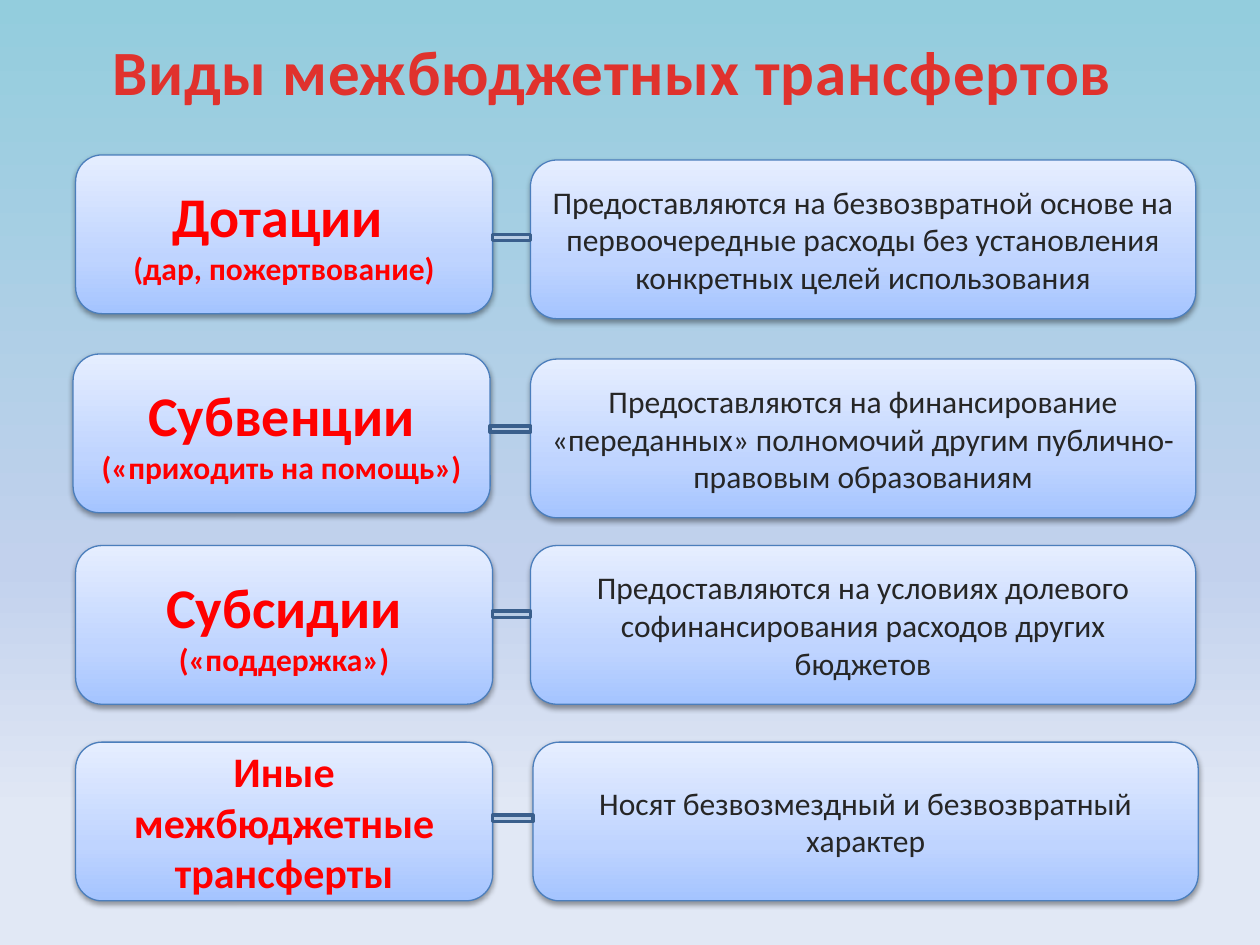
import pptx
import pptx.util
import pptx.oxml
import pptx.oxml.ns
import pptx.dml.color
import pptx.enum.shapes
import pptx.enum.text

Inches = pptx.util.Inches
Pt = pptx.util.Pt
qn = pptx.oxml.ns.qn
rgb = pptx.dml.color.RGBColor.from_string
shapes = pptx.enum.shapes.MSO_SHAPE
center = pptx.enum.text.PP_ALIGN.CENTER
middle = pptx.enum.text.MSO_ANCHOR.MIDDLE
NAMESPACE = pptx.oxml.ns.nsdecls("a")

COLORS = {
    "sky": "93CDDD", "haze": "C2D1ED", "pale": "E1E8F5",
    "box_low": "A4C4FF", "box_mid": "BFD4FF", "box_high": "E6EEFF",
    "box_line": "4B7EBC", "title": "E0322D", "title_low": "A2201C",
    "term": "FF0000", "body": "262626", "bar": "B9CDE5", "bar_line": "3A5F8C",
}


def set_gradient(fill, parent, stops, angle):
    """Give parent a linear gradient of (percent, colour name) stops."""
    fill.background()
    marks = "".join(
        f'<a:gs pos="{percent * 1000}"><a:srgbClr val="{COLORS[name]}"/></a:gs>'
        for percent, name in stops)
    gradient = pptx.oxml.parse_xml(
        f'<a:gradFill {NAMESPACE} rotWithShape="1"><a:gsLst>{marks}</a:gsLst>'
        f'<a:lin ang="{angle * 60000}" scaled="0"/></a:gradFill>')
    parent.replace(parent.find(qn("a:noFill")), gradient)


def add_box(left, top, width, lines, color, bold):
    """Add a rounded box; lines holds (text, size) pairs."""
    box = page.shapes.add_shape(shapes.ROUNDED_RECTANGLE, Inches(left),
                                Inches(top), Inches(width), Inches(1.26))
    set_gradient(box.fill, box._element.spPr,
                 [(0, "box_low"), (35, "box_mid"), (100, "box_high")], 270)
    box.line.color.rgb = rgb(COLORS["box_line"])
    box.line.width = Pt(0.75)
    box.shadow.inherit = False
    box._element.spPr.find(qn("a:effectLst")).append(pptx.oxml.parse_xml(
        f'<a:outerShdw {NAMESPACE} blurRad="40000" dist="20000" dir="5400000" '
        'rotWithShape="0"><a:srgbClr val="000000"><a:alpha val="38000"/>'
        '</a:srgbClr></a:outerShdw>'))
    frame = box.text_frame
    frame.word_wrap = True
    frame.vertical_anchor = middle
    frame.text = "\n".join(text for text, size in lines)
    for para, (text, size) in zip(frame.paragraphs, lines):
        para.alignment = center
        font = para.runs[0].font
        font.name = "Calibri"
        font.size = Pt(size)
        font.bold = bold
        font.color.rgb = rgb(COLORS[color])


deck = pptx.Presentation()
deck.slide_width = Inches(10)
deck.slide_height = Inches(7.5)
page = deck.slides.add_slide(deck.slide_layouts[6])

# Background
background_fill = page.background.fill
background_fill.background()
set_gradient(background_fill, page._element.cSld.find(qn("p:bg")).bgPr,
             [(0, "sky"), (60, "haze"), (86, "pale")], 90)

# Title
title = page.shapes.add_textbox(Inches(0.75), Inches(0.21),
                                Inches(8.22), Inches(0.71))
title.text_frame.word_wrap = False
title.text_frame.auto_size = pptx.enum.text.MSO_AUTO_SIZE.SHAPE_TO_FIT_TEXT
title.text_frame.text = "Виды межбюджетных трансфертов"
para = title.text_frame.paragraphs[0]
para.alignment = center
span = para.runs[0]
span.font.name = "Calibri"
span.font.size = Pt(36)
span.font.bold = True
properties = span._r.get_or_add_rPr()
properties.set("spc", "50")
set_gradient(span.font.fill, properties,
             [(25, "title"), (100, "title_low")], 90)

# Rows: term box (left, top), description box (left, top), bar top, texts
rows = [
    (0.6, 1.23, 4.21, 1.27, 1.86,
     [("Дотации ", 32), ("(дар, пожертвование)", 18)],
     "Предоставляются на безвозвратной основе на первоочередные расходы "
     "без установления конкретных целей использования"),
    (0.58, 2.81, 4.21, 2.85, 3.38,
     [("Субвенции", 32), ("(«приходить на помощь»)", 18)],
     "Предоставляются на финансирование «переданных» полномочий "
     "другим публично-правовым образованиям"),
    (0.6, 4.33, 4.21, 4.33, 4.85,
     [("Субсидии", 32), ("(«поддержка»)", 18)],
     "Предоставляются на условиях долевого софинансирования "
     "расходов других бюджетов"),
    (0.6, 5.89, 4.23, 5.89, 6.47,
     [("Иные межбюджетные трансферты", 24)],
     "Носят безвозмездный и безвозвратный характер"),
]
term_width = 3.31
for term_left, term_top, body_left, body_top, bar_top, term, body in rows:
    add_box(term_left, term_top, term_width, term, "term", True)
    add_box(body_left, body_top, 5.28, [(body, 18)], "body", False)

    # Bar bridging the gap between the two boxes
    bar_left = term_left + term_width
    bar = page.shapes.add_shape(shapes.RECTANGLE, Inches(bar_left),
                                Inches(bar_top), Inches(body_left - bar_left),
                                Inches(0.05))
    bar.shadow.inherit = False
    bar.fill.solid()
    bar.fill.fore_color.rgb = rgb(COLORS["bar"])
    bar.line.color.rgb = rgb(COLORS["bar_line"])
    bar.line.width = Pt(2)

deck.save("out.pptx")
